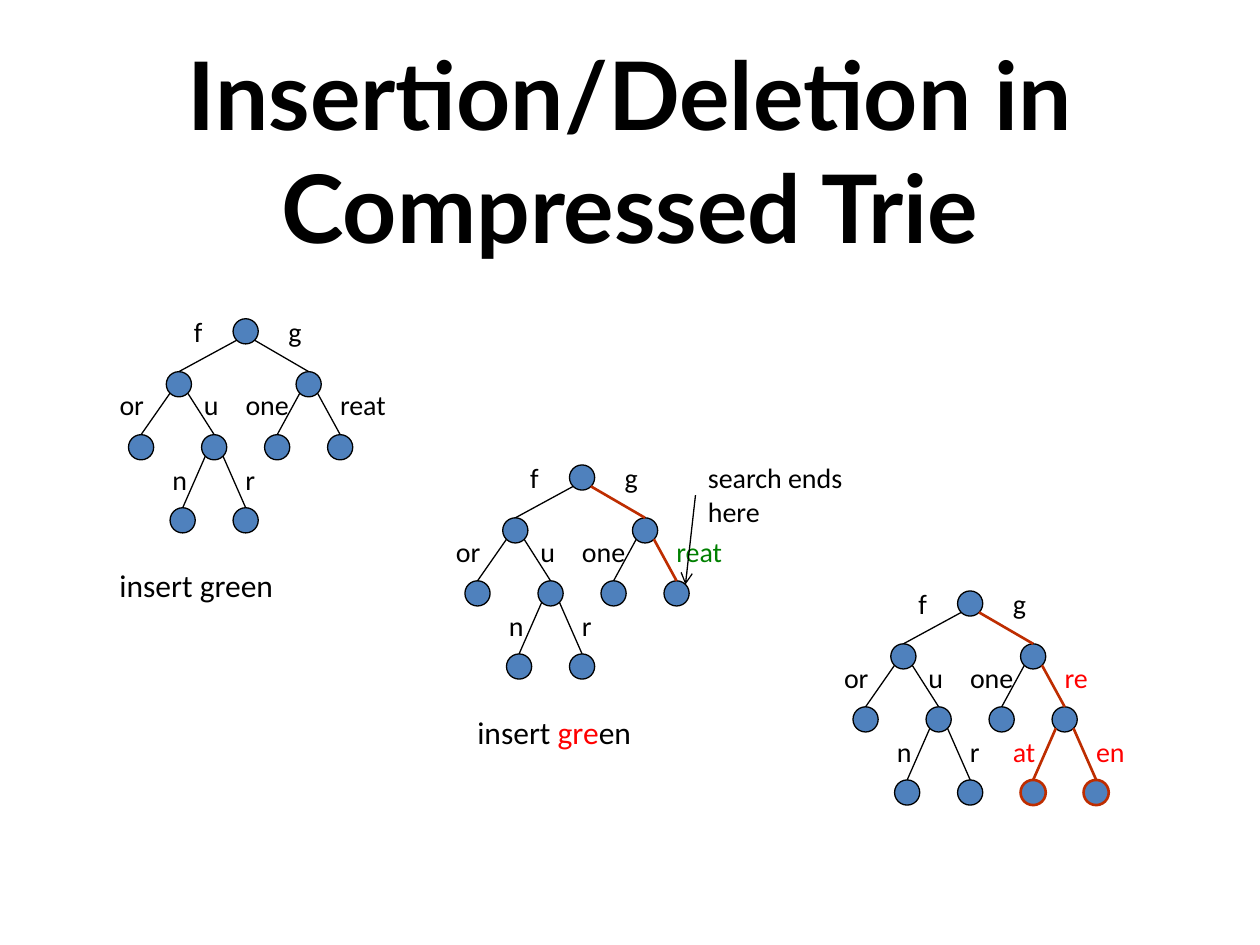
from pptx import Presentation
from pptx.dml.color import RGBColor
from pptx.enum.shapes import MSO_CONNECTOR, MSO_SHAPE
from pptx.enum.text import MSO_ANCHOR, MSO_AUTO_SIZE, PP_ALIGN
from pptx.oxml.ns import qn
from pptx.util import Inches, Pt
from lxml.etree import SubElement

THEME = {
    "title_font": "Lato", "body_font": "Calibri",
    "title": 54, "caption": 18, "label": 16,
    "black": "000000", "node": "4F81BD", "path": "BE2D00",
    "red": "FF0000", "green": "008000",
    "thin": 0.75, "thick": 1.5,
}
NODE = 0.2       # node diameter
CORNER = 0.07    # offset from node centre to the start of an edge
LABEL_H = 0.37

TITLE = "Insertion/Deletion in Compressed Trie"

# Node positions relative to the root's top left corner
NODES = {
    "root": (0, 0), "f": (-0.53, 0.42), "g": (0.5, 0.42),
    "or": (-0.83, 0.92), "u": (-0.25, 0.92), "one": (0.25, 0.92), "reat": (0.75, 0.92),
    "n": (-0.5, 1.5), "r": (0, 1.5), "at": (0.5, 1.5), "en": (1, 1.5),
}
PARENT = {
    "f": "root", "g": "root", "or": "f", "u": "f", "one": "g", "reat": "g",
    "n": "u", "r": "u", "at": "reat", "en": "reat",
}
# Label left, top and width, relative to the same corner
LABELS = {
    "f": (-0.41, -0.08, 0.33), "g": (0.34, -0.08, 0.33),
    "reat": (0.75, 0.5, 0.58), "one": (0, 0.5, 0.58),
    "u": (-0.33, 0.5, 0.5), "or": (-1, 0.5, 0.42),
    "n": (-0.58, 1.09, 0.33), "r": (0, 1.09, 0.33),
    "at": (0.34, 1.09, 0.58), "en": (1, 1.09, 0.58),
}
SPLIT = ("at", "en")   # nodes that appear once "reat" is split

# relabel: node -> (text, colour)
TRIES = [
    {"root": (1.85, 2.53), "path": (), "relabel": {}, "split": False},
    {"root": (4.52, 3.69), "path": ("g", "reat"), "split": False,
     "relabel": {"reat": ("reat", "green")}},
    {"root": (7.6, 4.69), "path": ("g", "reat", *SPLIT), "split": True,
     "relabel": {"reat": ("re", "red"), "at": ("at", "red"), "en": ("en", "red")}},
]
# left, top, width, height, size, paragraphs of (text, colour) runs
NOTES = [
    (0.85, 4.44, 2.17, 0.5, "caption", [[("insert green", "black")]]),
    (3.69, 5.61, 2.17, 0.5, "caption",
     [[("insert ", "black"), ("gre", "red"), ("en", "black")]]),
    (5.52, 3.61, 1.5, 0.64, "label", [[("search ends", "black")], [("here", "black")]]),
]
SEARCH_ARROW = ((5.52, 3.93), (5.44, 4.64))


def color(name):
    return RGBColor.from_string(THEME[name])


def style_line(line, on_path):
    line.color.rgb = color("path" if on_path else "black")
    line.width = Pt(THEME["thick" if on_path else "thin"])


def add_text(shapes, left, top, width, height, size, paragraphs):
    tf = shapes.add_textbox(Inches(left), Inches(top), Inches(width), Inches(height)).text_frame
    tf.word_wrap = True
    tf.auto_size = MSO_AUTO_SIZE.SHAPE_TO_FIT_TEXT
    for i, runs in enumerate(paragraphs):
        p = tf.add_paragraph() if i else tf.paragraphs[0]
        for text, name in runs:
            r = p.add_run()
            r.text = text
            r.font.name = THEME["body_font"]
            r.font.size = Pt(THEME[size])
            r.font.color.rgb = color(name)


def add_node(shapes, left, top, on_path):
    sp = shapes.add_shape(MSO_SHAPE.OVAL, Inches(left), Inches(top), Inches(NODE), Inches(NODE))
    sp.shadow.inherit = False
    sp.fill.solid()
    sp.fill.fore_color.rgb = color("node")
    style_line(sp.line, on_path)
    return sp


def add_line(shapes, start, end, on_path=False):
    cxn = shapes.add_connector(MSO_CONNECTOR.STRAIGHT, *(Inches(v) for v in (*start, *end)))
    style_line(cxn.line, on_path)
    SubElement(cxn._element.spPr, qn("a:effectLst"))
    return cxn


def add_trie(slide, trie):
    shapes = slide.shapes.add_group_shape().shapes
    x0, y0 = trie["root"]
    keys = [k for k in NODES if trie["split"] or k not in SPLIT]
    # Nodes
    ovals = {}
    for k in keys:
        dx, dy = NODES[k]
        ovals[k] = add_node(shapes, x0 + dx, y0 + dy, k in SPLIT)
    # Edges, from a lower corner of the parent to the top of the child
    for k in keys[1:]:
        (px, py), (cx, cy) = NODES[PARENT[k]], NODES[k]
        side = CORNER if cx > px else -CORNER
        start = (x0 + px + NODE / 2 + side, y0 + py + NODE / 2 + CORNER)
        edge = add_line(shapes, start, (x0 + cx + NODE / 2, y0 + cy), k in trie["path"])
        edge.end_connect(ovals[k], 0)
    # Edge labels
    for k, (dx, dy, width) in LABELS.items():
        if k in keys:
            run = trie["relabel"].get(k, (k, "black"))
            add_text(shapes, x0 + dx, y0 + dy, width, LABEL_H, "label", [[run]])


def main():
    prs = Presentation()
    prs.slide_width, prs.slide_height = Inches(10), Inches(7.5)
    slide = prs.slides.add_slide(prs.slide_layouts[5])

    # Title
    title = slide.shapes.title
    title.left, title.top, title.width, title.height = (Inches(v) for v in (0.5, 0.56, 9, 1.25))
    tf = title.text_frame
    tf.text = TITLE
    tf.word_wrap = True
    tf.auto_size = MSO_AUTO_SIZE.NONE
    tf.vertical_anchor = MSO_ANCHOR.MIDDLE
    p = tf.paragraphs[0]
    p.alignment = PP_ALIGN.CENTER
    font = p.runs[0].font
    font.name, font.size, font.bold = THEME["title_font"], Pt(THEME["title"]), True
    font.color.rgb = color("black")

    # Tries, captions and the search pointer
    for trie in TRIES:
        add_trie(slide, trie)
    for note in NOTES:
        add_text(slide.shapes, *note)
    arrow = add_line(slide.shapes, *SEARCH_ARROW)
    SubElement(arrow.line._get_or_add_ln(), qn("a:tailEnd"), type="arrow")

    prs.save("out.pptx")


if __name__ == "__main__":
    main()
